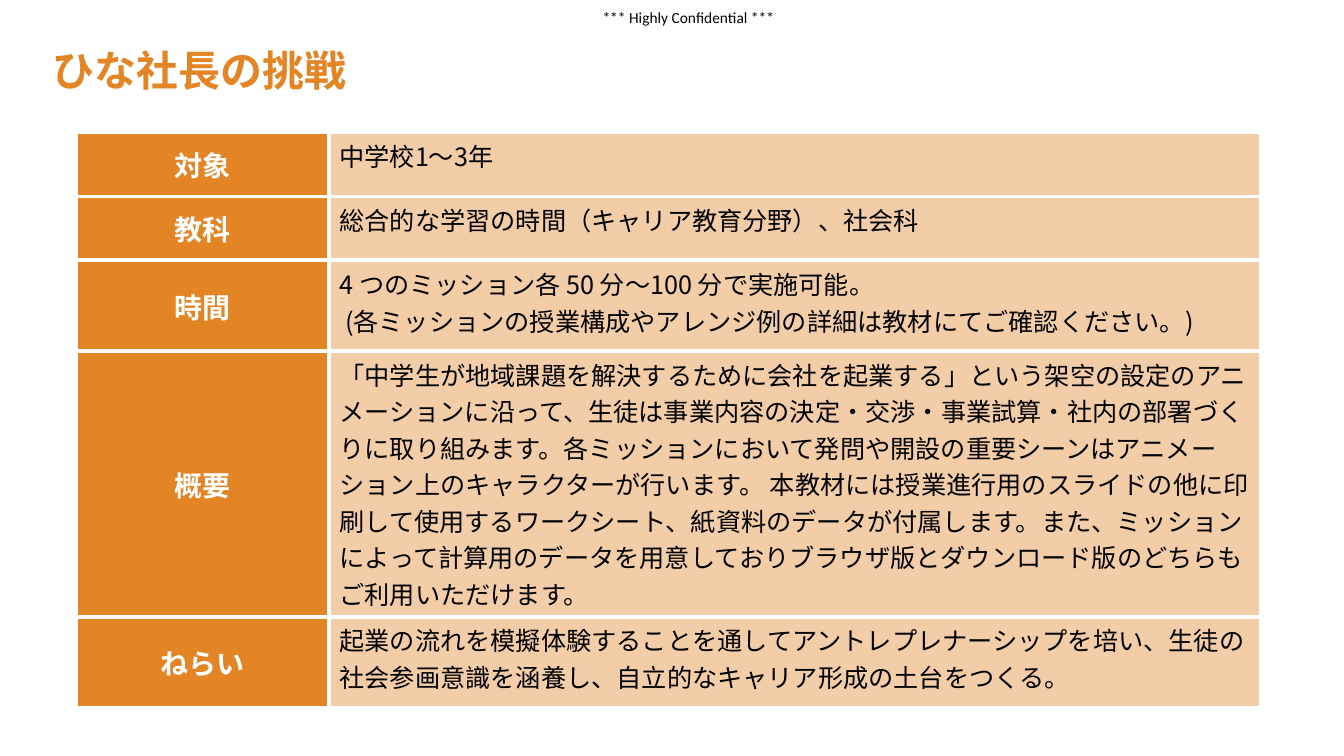
from dataclasses import dataclass

from lxml import etree
from pptx import Presentation
from pptx.dml.color import RGBColor
from pptx.enum.text import MSO_ANCHOR, PP_ALIGN
from pptx.oxml.ns import qn
from pptx.util import Cm, Pt

LEFT, CENTER = PP_ALIGN.LEFT, PP_ALIGN.CENTER
TOP, MIDDLE = MSO_ANCHOR.TOP, MSO_ANCHOR.MIDDLE
TITLE_ONLY = 5


@dataclass(frozen=True)
class Theme:
    """Colours, fonts and type sizes of the deck."""

    accent: str = "E38425"
    white: str = "FFFFFF"
    black: str = "000000"
    tint: int = 40
    border: int = 3
    font: str = "Noto Sans CJK JP"
    notice_font: str = "Calibri"
    notice_size: int = 11
    title_size: int = 30
    label_size: int = 20
    body_size: int = 18


THEME = Theme()
COLUMN_WIDTHS = (6.37, 23.47)
ROWS = [
    (1.61, "対象", ["中学校1〜3年"]),
    (1.61, "教科", ["総合的な学習の時間（キャリア教育分野）、社会科"]),
    (2.29, "時間", [
        "4 つのミッション各 50 分〜100 分で実施可能。",
        " (各ミッションの授業構成やアレンジ例の詳細は教材にてご確認ください。)",
    ]),
    (6.69, "概要", [
        "「中学生が地域課題を解決するために会社を起業する」という架空の設定の"
        "アニメーションに沿って、生徒は事業内容の決定・交渉・事業試算・社内の部署づくりに取り組みます。"
        "各ミッションにおいて発問や開設の重要シーンはアニメーション上のキャラクターが行います。 "
        "本教材には授業進行用のスライドの他に印刷して使用するワークシート、紙資料のデータが付属します。"
        "また、ミッションによって計算用のデータを用意しており"
        "ブラウザ版とダウンロード版のどちらもご利用いただけます。",
    ]),
    (2.29, "ねらい", [
        "起業の流れを模擬体験することを通してアントレプレナーシップを培い、"
        "生徒の社会参画意識を涵養し、自立的なキャリア形成の土台をつくる。",
    ]),
]


def write_text(frame, lines, size, color, bold=False, align=LEFT, font=THEME.font):
    """Fill a text frame with one evenly formatted paragraph per line."""
    frame.text = "\n".join(lines)
    for para in frame.paragraphs:
        para.alignment = align
        para.font.size = Pt(size)
        para.font.bold = bold
        para.font.color.rgb = RGBColor.from_string(color)
        para.font.name = font
        properties = para.font._element
        etree.SubElement(properties, qn("a:ea"), typeface=font)


def format_cell(cell, anchor, tint=None):
    """Give a cell its borders, accent fill and anchor."""
    properties = cell._tc.get_or_add_tcPr()
    for side in ("a:lnL", "a:lnR", "a:lnT", "a:lnB"):
        line = etree.SubElement(properties, qn(side), w=str(Pt(THEME.border)))
        paint = etree.SubElement(line, qn("a:solidFill"))
        etree.SubElement(paint, qn("a:srgbClr"), val=THEME.white)
    cell.fill.solid()
    cell.fill.fore_color.rgb = RGBColor.from_string(THEME.accent)
    if tint:
        color = properties.find(qn("a:solidFill")).find(qn("a:srgbClr"))
        etree.SubElement(color, qn("a:alpha"), val=str(tint * 1000))
    cell.vertical_anchor = anchor


def add_notice(page, left, top, width, height):
    """Add the confidentiality line in the given box."""
    box = page.shapes.add_textbox(Cm(left), Cm(top), Cm(width), Cm(height))
    frame = box.text_frame
    frame.word_wrap = True
    frame.vertical_anchor = MIDDLE
    frame.margin_left = frame.margin_right = 0
    frame.margin_top = frame.margin_bottom = 0
    write_text(frame, ["*** Highly Confidential ***"], THEME.notice_size,
               THEME.black, align=CENTER, font=THEME.notice_font)


def place_title(page, left, top, width, height):
    """Move the title placeholder to the given box and format it."""
    title = page.shapes.title
    title.left, title.top = Cm(left), Cm(top)
    title.width, title.height = Cm(width), Cm(height)
    frame = title.text_frame
    frame.vertical_anchor = MIDDLE
    write_text(frame, ["ひな社長の挑戦"], THEME.title_size, THEME.accent, bold=True)
    frame.paragraphs[0].line_spacing = 0.8


def add_outline_table(page, left, top):
    """Add the table of the teaching material from the given corner."""
    width = sum(COLUMN_WIDTHS)
    height = sum(row[0] for row in ROWS)
    table = page.shapes.add_table(len(ROWS), len(COLUMN_WIDTHS), Cm(left), Cm(top),
                                  Cm(width), Cm(height)).table
    table.first_row = table.horz_banding = False
    for column, column_width in zip(table.columns, COLUMN_WIDTHS):
        column.width = Cm(column_width)
    for row, (row_height, label, lines) in zip(table.rows, ROWS):
        row.height = Cm(row_height)
        label_cell, body_cell = row.cells
        format_cell(label_cell, MIDDLE)
        write_text(label_cell.text_frame, [label], THEME.label_size, THEME.white,
                   bold=True, align=CENTER)
        format_cell(body_cell, TOP, THEME.tint)
        write_text(body_cell.text_frame, lines, THEME.body_size, THEME.black)


def main():
    """Build the slide and save the deck."""
    deck = Presentation()
    deck.slide_width, deck.slide_height = Cm(33.87), Cm(19.05)
    page = deck.slides.add_slide(deck.slide_layouts[TITLE_ONLY])
    add_notice(page, 9.2, 0.05, 16.3, 0.8)
    place_title(page, 1.06, 1.3, 31.75, 1.17)
    add_outline_table(page, 1.93, 3.34)
    deck.save("out.pptx")


if __name__ == "__main__":
    main()
